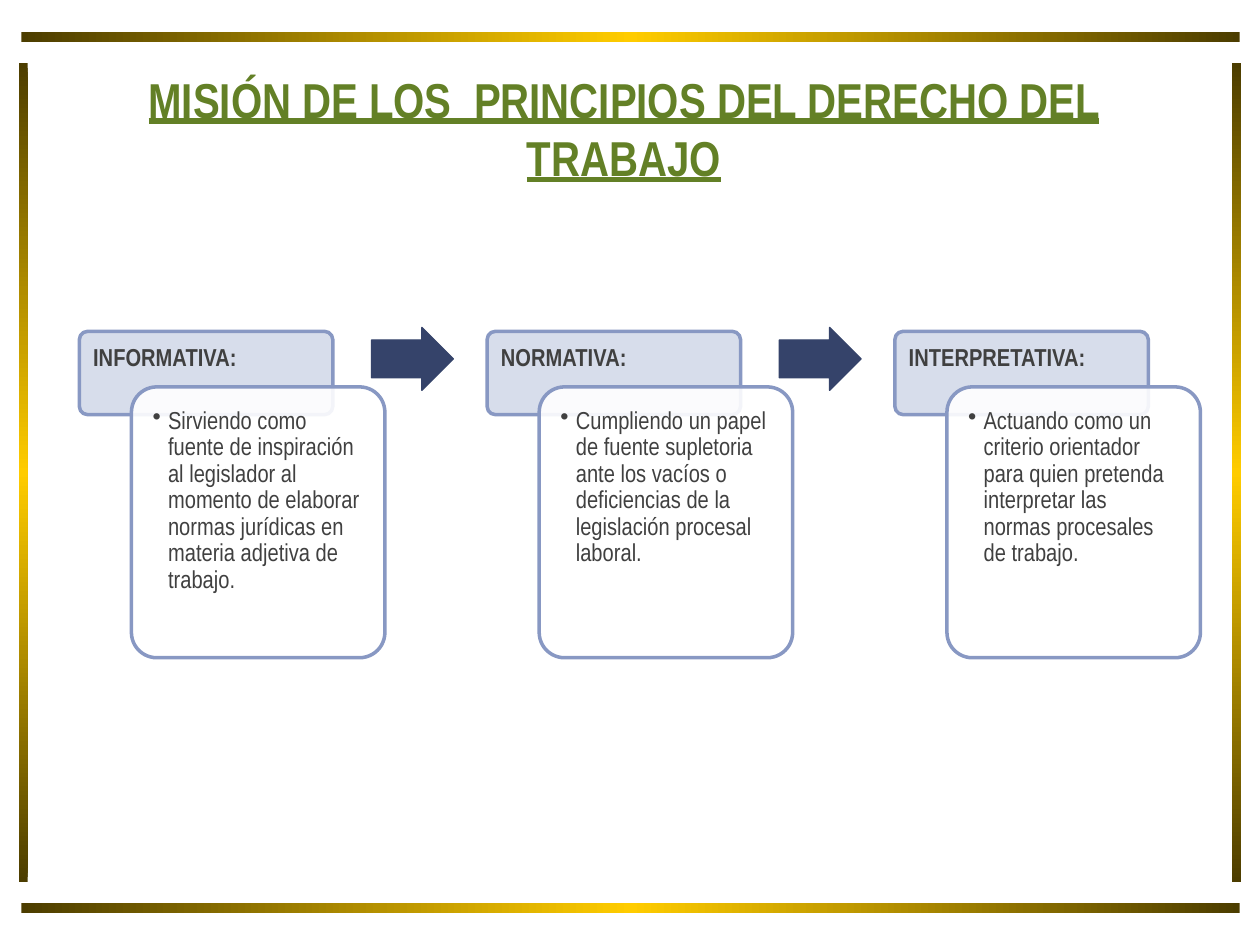
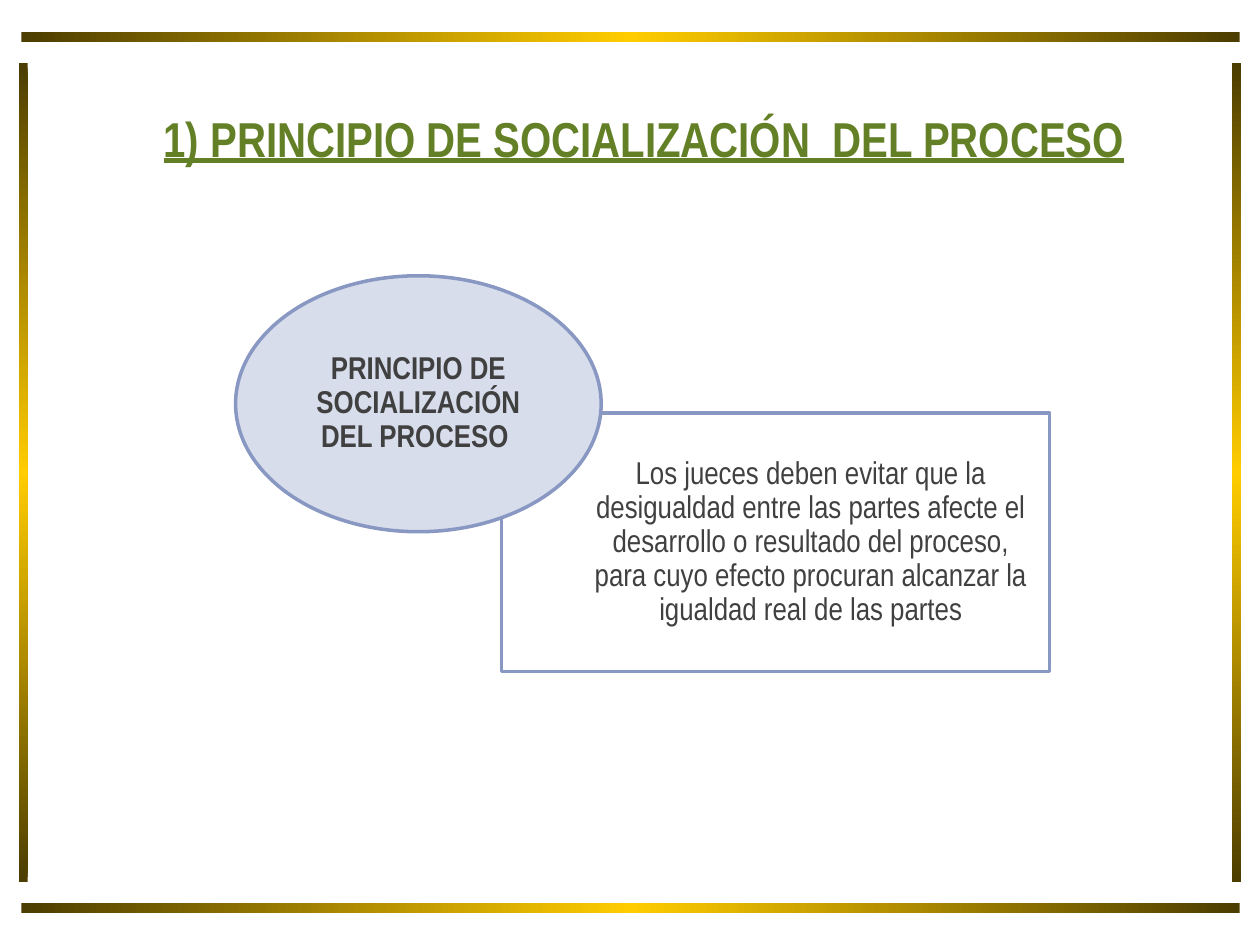
"""Build two slides on the principles of labour law."""
from dataclasses import dataclass

import lxml.etree
import pptx
import pptx.dml.color
import pptx.enum.shapes
import pptx.enum.text
import pptx.oxml.ns
import pptx.util

Cm, Pt, qn = pptx.util.Cm, pptx.util.Pt, pptx.oxml.ns.qn
SHAPE = pptx.enum.shapes.MSO_SHAPE
ALIGN = pptx.enum.text.PP_ALIGN
ANCHOR = pptx.enum.text.MSO_ANCHOR

FONT = "Arial Narrow"
GREEN, GREY = "638026", "404040"
PALE_BLUE, BLUE, NAVY, WHITE = "D7DDEB", "8898C3", "35436A", "FFFFFF"
BROWN, GOLD = "4C3D00", "FFCC00"


@dataclass(frozen=True)
class Box:
    left: float
    top: float
    width: float
    height: float

    def lengths(self) -> tuple:
        return tuple(Cm(n) for n in (self.left, self.top, self.width, self.height))


@dataclass(frozen=True)
class Band:
    box: Box
    angle: int


@dataclass(frozen=True)
class Mission:
    name: str
    purpose: str


BANDS = [
    Band(Box(0.43, 0.64, 24.56, 0.2), 0),
    Band(Box(0.43, 18.21, 24.56, 0.2), 0),
    Band(Box(0.38, 1.27, 0.18, 16.51), 90),
    Band(Box(24.84, 1.27, 0.18, 16.51), 90),
]

MISSIONS = [
    Mission("INFORMATIVA:", "Sirviendo como fuente de inspiración al legislador al momento "
            "de elaborar normas jurídicas en materia adjetiva de trabajo."),
    Mission("NORMATIVA:", "Cumpliendo un papel de fuente supletoria ante los vacíos o "
            "deficiencias de la legislación procesal laboral."),
    Mission("INTERPRETATIVA:", "Actuando como un criterio orientador para quien pretenda "
            "interpretar las normas procesales de trabajo."),
]
MISSION_LEFT, MISSION_PITCH = 1.6, 8.22


def rgb(color: str):
    return pptx.dml.color.RGBColor.from_string(color)


def write(frame, text: str, *, size: float, color: str = GREY, bold: bool = False,
          underline: bool = False, align=ALIGN.LEFT, anchor=ANCHOR.TOP,
          insets: tuple = (0, 0, 0, 0), spacing: float = 0.9):
    frame.word_wrap = True
    frame.auto_size = pptx.enum.text.MSO_AUTO_SIZE.NONE
    frame.vertical_anchor = anchor
    (frame.margin_left, frame.margin_top,
     frame.margin_right, frame.margin_bottom) = (Cm(n) for n in insets)
    paragraph = frame.paragraphs[0]
    paragraph.alignment = align
    paragraph.line_spacing = spacing
    run = paragraph.add_run()
    run.text = text
    run.font.name = FONT
    run.font.size = Pt(size)
    run.font.bold = bold
    run.font.underline = underline
    run.font.color.rgb = rgb(color)
    return paragraph


def add_bullet(paragraph, indent: float) -> None:
    properties = paragraph._p.get_or_add_pPr()
    properties.set("marL", str(Cm(indent)))
    properties.set("indent", str(-Cm(indent)))
    lxml.etree.SubElement(properties, qn("a:buChar"), char="•")


def draw(slide, preset, box: Box, *, fill: str | None = None, line: str | None = BLUE,
         line_width: float = 2, adjustments: tuple = ()):
    shape = slide.shapes.add_shape(preset, *box.lengths())
    shape.shadow.inherit = False
    for index, value in enumerate(adjustments):
        shape.adjustments[index] = value
    if fill:
        shape.fill.solid()
        shape.fill.fore_color.rgb = rgb(fill)
    else:
        shape.fill.background()
    if line:
        shape.line.color.rgb = rgb(line)
        shape.line.width = Pt(line_width)
    else:
        shape.line.fill.background()
    return shape


def draw_band(slide, band: Band):
    shape = draw(slide, SHAPE.RECTANGLE, band.box, line=None)
    shape.fill.gradient()
    shape.fill.gradient_angle = band.angle
    stops = shape.element.find(".//" + qn("a:gsLst"))
    stops.clear()
    for percent, color in ((0, BROWN), (50, GOLD), (100, BROWN)):
        stop = lxml.etree.SubElement(stops, qn("a:gs"), pos=str(percent * 1000))
        lxml.etree.SubElement(stop, qn("a:srgbClr"), val=color)
    return shape


def frame_layout(layout, slide) -> None:
    """Move the gold bands into the layout so that every slide shares them."""
    for placeholder in list(layout.placeholders):
        if placeholder.placeholder_format.idx >= 10:
            layout.shapes.element.remove(placeholder.element)
    for band in [draw_band(slide, band) for band in BANDS]:
        layout.shapes.element.append(band.element)


def add_titled_slide(deck, layout, title: str, left: float, top: float):
    slide = deck.slides.add_slide(layout)
    heading = slide.shapes.title
    heading.left, heading.top, heading.width, heading.height = Box(left, top, 21.59, 3.18).lengths()
    write(heading.text_frame, title, size=28, color=GREEN, bold=True, underline=True,
          align=ALIGN.CENTER, anchor=ANCHOR.MIDDLE, insets=(0.25, 0.13, 0.25, 0.13), spacing=1.0)
    return slide


def draw_mission(slide, mission: Mission, left: float) -> None:
    header = draw(slide, SHAPE.ROUNDED_RECTANGLE, Box(left, 6.68, 5.11, 1.68),
                  fill=PALE_BLUE, adjustments=(0.1,))
    write(header.text_frame, mission.name, size=14, bold=True, insets=(0.23, 0.23, 0.23, 0.1))
    body = draw(slide, SHAPE.ROUNDED_RECTANGLE, Box(left + 1.05, 7.8, 5.11, 5.46),
                fill=WHITE, adjustments=(0.1,))
    body_color = body.element.find(".//" + qn("a:srgbClr"))
    lxml.etree.SubElement(body_color, qn("a:alpha"), val="90000")
    purpose = write(body.text_frame, mission.purpose, size=14, insets=(0.28,) * 4)
    add_bullet(purpose, 0.31)


def build_missions(slide) -> None:
    for index, mission in enumerate(MISSIONS):
        left = MISSION_LEFT + index * MISSION_PITCH
        draw_mission(slide, mission, left)
        if index < len(MISSIONS) - 1:
            draw(slide, SHAPE.RIGHT_ARROW, Box(left + 5.89, 6.6, 1.65, 1.27), fill=NAVY,
                 line=NAVY, line_width=0.75, adjustments=(0.6, 0.5))


def build_socialization(slide) -> None:
    explanation = draw(slide, SHAPE.RECTANGLE, Box(10.11, 8.33, 11.05, 5.21))
    write(explanation.text_frame,
          "Los jueces deben evitar que la desigualdad entre las partes afecte el desarrollo o "
          "resultado del proceso, para cuyo efecto procuran alcanzar la igualdad real de las partes",
          size=18, align=ALIGN.CENTER, anchor=ANCHOR.MIDDLE, insets=(1.78, 0.36, 0.36, 0.36))
    principle = draw(slide, SHAPE.OVAL, Box(4.75, 5.56, 7.37, 5.16), fill=PALE_BLUE)
    write(principle.text_frame, "PRINCIPIO DE SOCIALIZACIÓN DEL PROCESO ", size=18, bold=True,
          align=ALIGN.CENTER, anchor=ANCHOR.MIDDLE)


def main() -> None:
    deck = pptx.Presentation()
    deck.slide_width, deck.slide_height = Cm(25.4), Cm(19.05)
    title_only = deck.slide_layouts[5]
    missions = add_titled_slide(
        deck, title_only, "MISIÓN DE LOS  PRINCIPIOS DEL DERECHO DEL TRABAJO", 1.78, 0.99)
    frame_layout(title_only, missions)
    build_missions(missions)
    socialization = add_titled_slide(
        deck, title_only, "1) PRINCIPIO DE SOCIALIZACIÓN  DEL PROCESO", 2.18, 1.19)
    build_socialization(socialization)
    deck.save("out.pptx")


if __name__ == "__main__":
    main()
